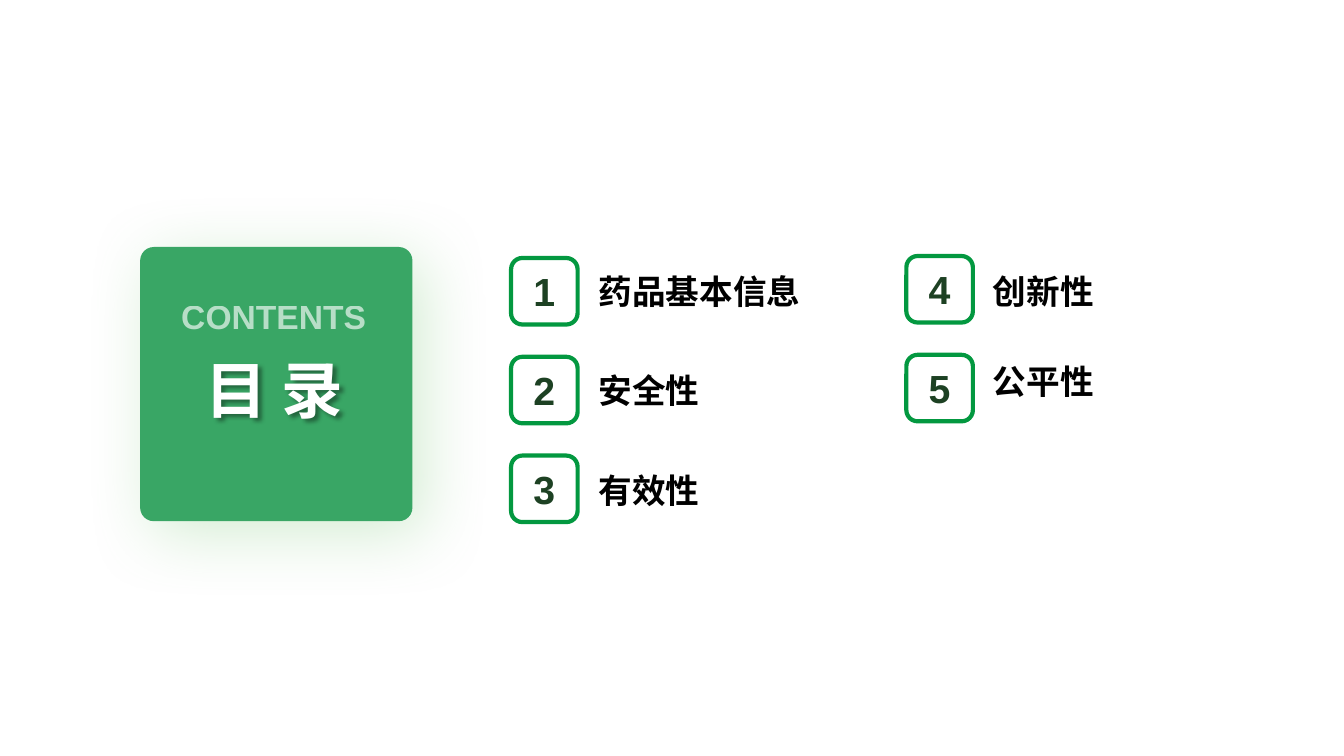
from lxml import etree
from pptx import Presentation
from pptx import util as u
from pptx.dml.color import RGBColor
from pptx.enum import shapes, text
from pptx.oxml.ns import qn

WHITE = RGBColor(0xFF, 0xFF, 0xFF)
BLACK = RGBColor(0x00, 0x00, 0x00)
CARD = RGBColor(0x39, 0xA6, 0x65)
GLOW = RGBColor(0x94, 0xD2, 0x91)
BORDER = RGBColor(0x03, 0x98, 0x40)
DIGIT = RGBColor(0x1D, 0x41, 0x23)

COLUMNS = [
    dict(badge=(38.03, 34.13), label=(43.81, 35.2), step=13.13,
         names=["药品基本信息", "安全性", "有效性"]),
    dict(badge=(67.44, 33.87), label=(73.14, 35.2), step=11.87,
         names=["创新性", "公平性"]),
]
BADGE_STEP = 13.07


class ContentsSlide:
    """Draws styled elements on one slide, with lengths in percent of its size."""

    font = "Arial"

    def __init__(self, prs):
        self.prs = prs
        self.slide = prs.slides.add_slide(prs.slide_layouts[5])

    def box(self, x, y, w, h):
        """Turn percentages into left, top, width and height."""
        sw, sh = self.prs.slide_width, self.prs.slide_height
        return [u.Emu(round(v * full / 100))
                for v, full in ((x, sw), (y, sh), (w, sw), (h, sh))]

    def set_text(self, sp, words, size, color, align, anchor):
        """Fill a shape with one bold paragraph."""
        tf = sp.text_frame
        tf.word_wrap = True
        tf.vertical_anchor = anchor
        p = tf.paragraphs[0]
        p.text = words
        p.alignment = align
        p.font.name, p.font.size, p.font.bold = self.font, u.Pt(size), True
        p.font.color.rgb = color
        return p

    def shadow(self, sp, color, alpha, blur, dist):
        """Give a shape a soft shadow towards the lower right."""
        sp.shadow.inherit = False
        effects = sp._element.spPr.find(qn("a:effectLst"))
        outer = etree.SubElement(
            effects, qn("a:outerShdw"), blurRad=str(u.Pt(blur)),
            dist=str(u.Pt(dist)), dir=str(45 * 60000), algn="ctr", rotWithShape="0")
        clr = etree.SubElement(outer, qn("a:srgbClr"), val=str(color))
        etree.SubElement(clr, qn("a:alpha"), val=str(alpha * 1000))

    def panel(self, box, fill, radius, line=None):
        """Add a rounded rectangle."""
        sp = self.slide.shapes.add_shape(
            shapes.MSO_SHAPE.ROUNDED_RECTANGLE, *self.box(*box))
        sp.adjustments[0] = radius
        sp.shadow.inherit = False
        sp.fill.solid()
        sp.fill.fore_color.rgb = fill
        if line is None:
            sp.line.fill.background()
        else:
            sp.line.color.rgb = line
            sp.line.width = u.Pt(3)
        return sp

    def badge(self, x, y, number):
        """Add a numbered square."""
        sp = self.panel((x, y, 4.95, 8.8), WHITE, 0.17, BORDER)
        self.set_text(sp, str(number), 28, DIGIT,
                      text.PP_ALIGN.CENTER, text.MSO_ANCHOR.MIDDLE)

    def label(self, box, words, color=BLACK, align=text.PP_ALIGN.LEFT):
        """Add a text box and return its paragraph."""
        sp = self.slide.shapes.add_textbox(*self.box(*box))
        p = self.set_text(sp, words, 24, color, align, text.MSO_ANCHOR.TOP)
        sp.text_frame.auto_size = text.MSO_AUTO_SIZE.SHAPE_TO_FIT_TEXT
        return p

    def title(self, box, words):
        """Place the title in front of everything drawn so far."""
        sp = self.slide.shapes.title
        sp.left, sp.top, sp.width, sp.height = self.box(*box)
        self.set_text(sp, words, 44, WHITE, text.PP_ALIGN.CENTER, text.MSO_ANCHOR.TOP)
        sp.text_frame.auto_size = text.MSO_AUTO_SIZE.SHAPE_TO_FIT_TEXT
        self.shadow(sp, BLACK, 40, 3, 3)
        sp._element.getparent().append(sp._element)


def main():
    prs = Presentation()
    prs.slide_width, prs.slide_height = u.Inches(13.33), u.Inches(7.5)
    s = ContentsSlide(prs)

    card = s.panel((10.43, 32.67, 20.26, 36.27), CARD, 0.05)
    s.shadow(card, GLOW, 40, 49, 12)
    s.title((13.65, 45.87, 13.5, 11.2), "目 录")
    p = s.label((12.45, 38.53, 15.83, 6.67), "CONTENTS", WHITE, text.PP_ALIGN.CENTER)
    clr = next(p._p.iter(qn("a:srgbClr")))
    etree.SubElement(clr, qn("a:alpha"), val="63000")

    number = 0
    for col in COLUMNS:
        for row, name in enumerate(col["names"]):
            number += 1
            x, y = col["badge"]
            s.badge(x, y + row * BADGE_STEP, number)
            x, y = col["label"]
            s.label((x, y + row * col["step"], 17.48, 6.67), name)

    prs.save("out.pptx")


if __name__ == "__main__":
    main()
